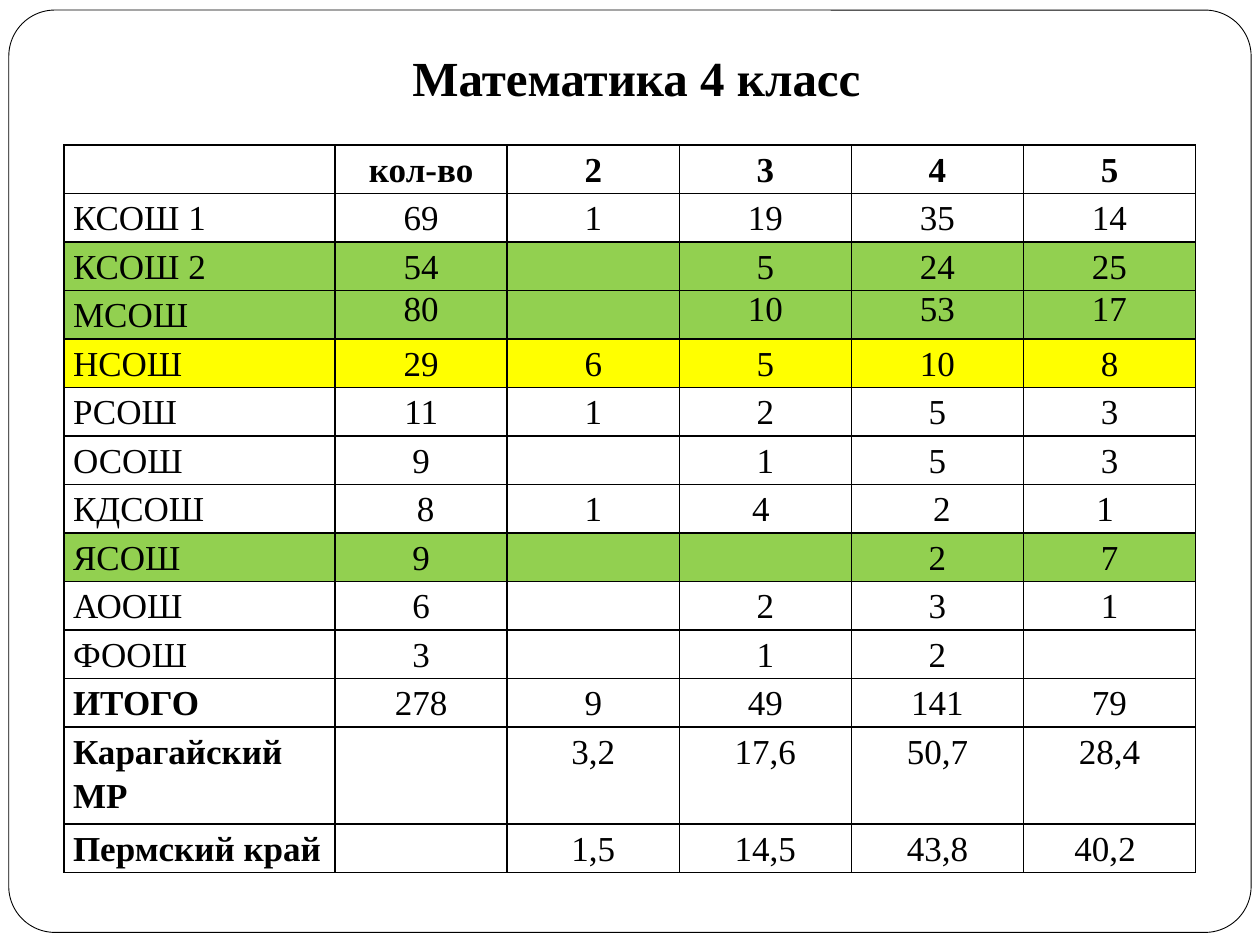
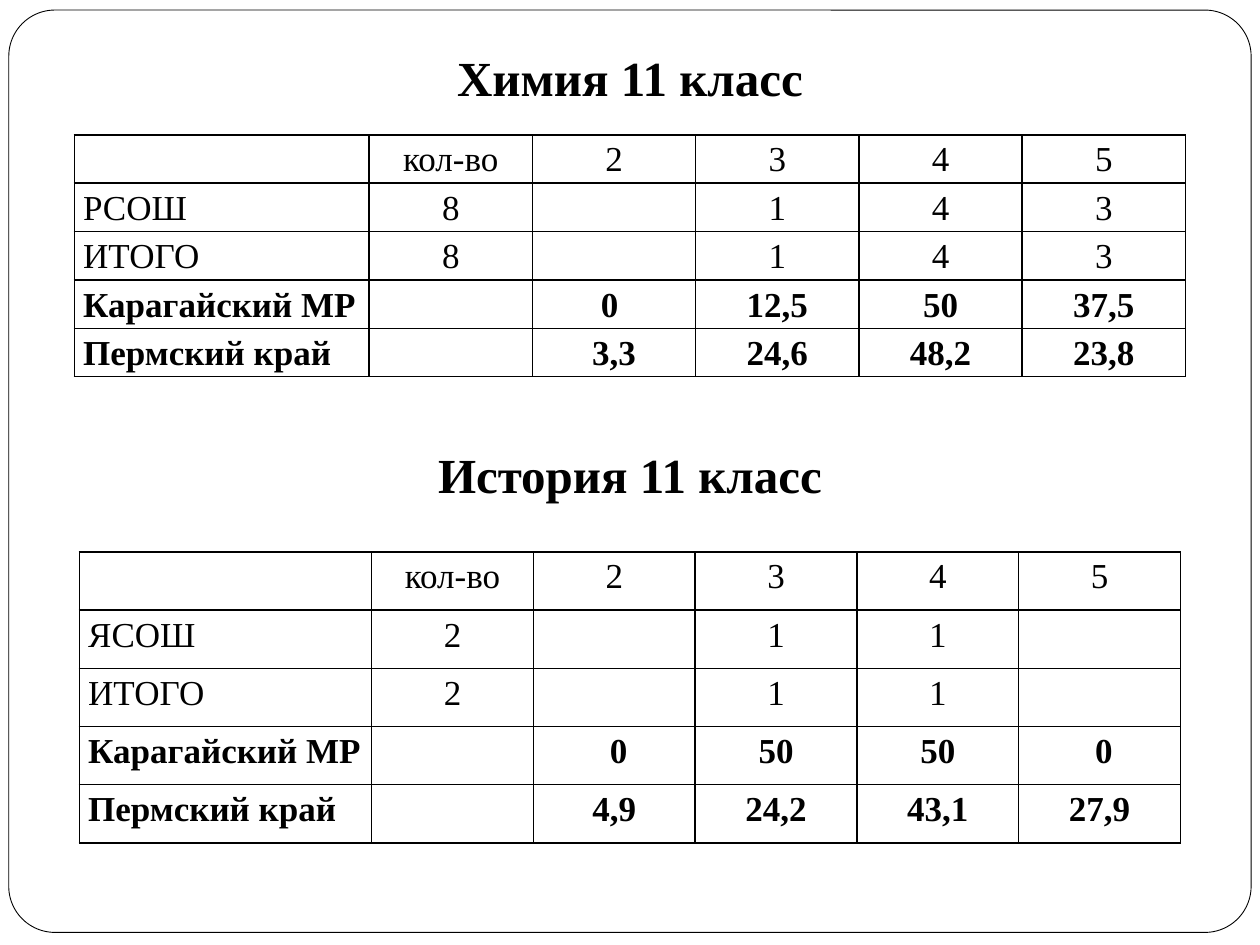
import dataclasses

import lxml.etree
import pptx
import pptx.dml.color
import pptx.enum.shapes
import pptx.enum.text
import pptx.oxml.ns
import pptx.util

Inches = pptx.util.Inches
Pt = pptx.util.Pt
CENTER = pptx.enum.text.PP_ALIGN.CENTER
LEFT = pptx.enum.text.PP_ALIGN.LEFT


@dataclasses.dataclass(frozen=True)
class Theme:
    font: str = "Times New Roman"
    title_size: float = 28
    cell_size: float = 20
    ink: str = "000000"
    paper: str = "FFFFFF"
    strong: str = "92D050"
    weak: str = "FFFF00"
    frame_line: float = 0.5
    grid_line: float = 1
    line_spacing: float = 1.15
    cell_margin: float = 0.07


THEME = Theme()


@dataclasses.dataclass(frozen=True)
class Grades:
    """Rows of marks, with the row numbers that are formatted differently."""
    rows: list
    bold_rows: tuple = ()
    bold_labels: tuple = ()
    tight_rows: tuple = ()
    tall_rows: tuple = ()
    fills: dict = dataclasses.field(default_factory=dict)


HEADER = "|кол-во|2|3|4|5"

MATHS = Grades(
    rows=[
        HEADER,
        "КСОШ 1|69|1|19|35|14",
        "КСОШ 2|54||5|24|25",
        "МСОШ|80||10|53|17",
        "НСОШ|29|6|5|10|8",
        "РСОШ|11|1|2|5|3",
        "ОСОШ|9||1|5|3",
        "КДСОШ| 8|1|4 | 2|1 ",
        "ЯСОШ|9|||2|7",
        "АООШ|6||2|3|1",
        "ФООШ|3||1|2|",
        "ИТОГО|278|9|49|141|79",
        "Карагайский МР||3,2|17,6|50,7|28,4",
        "Пермский край||1,5|14,5|43,8|40,2 ",
    ],
    bold_rows=(0,),
    bold_labels=(11, 12, 13),
    tight_rows=(3,),
    tall_rows=(12,),
    fills={2: THEME.strong, 3: THEME.strong, 4: THEME.weak, 8: THEME.strong},
)

CHEMISTRY = Grades(
    rows=[
        HEADER,
        "РСОШ|8||1|4|3",
        "ИТОГО|8||1|4|3",
        "Карагайский МР||0 |12,5|50|37,5",
        "Пермский край||3,3|24,6|48,2|23,8",
    ],
    bold_rows=(3, 4),
)

HISTORY = Grades(
    rows=[
        HEADER,
        "ЯСОШ|2||1|1|",
        "ИТОГО|2||1|1|",
        "Карагайский МР|| 0|50|50| 0",
        "Пермский край||4,9|24,2|43,1|27,9",
    ],
    bold_rows=(3, 4),
)


def rgb(value):
    return pptx.dml.color.RGBColor.from_string(value)


def style_paragraph(paragraph, size, bold, align):
    paragraph.alignment = align
    for run in paragraph.runs:
        run.font.name = THEME.font
        run.font.size = Pt(size)
        run.font.bold = bold
        run.font.color.rgb = rgb(THEME.ink)


def add_frame(slide, box):
    """Rounded outline around the whole slide."""
    frame = slide.shapes.add_shape(
        pptx.enum.shapes.MSO_SHAPE.ROUNDED_RECTANGLE, *map(Inches, box))
    frame.adjustments[0] = 0.05
    frame.shadow.inherit = False
    frame.fill.solid()
    frame.fill.fore_color.rgb = rgb(THEME.paper)
    frame.line.color.rgb = rgb(THEME.ink)
    frame.line.width = Pt(THEME.frame_line)


def add_title(slide, box, text):
    title = slide.shapes.add_textbox(*map(Inches, box)).text_frame
    title.word_wrap = True
    title.text = text
    style_paragraph(title.paragraphs[0], THEME.title_size, True, CENTER)


def add_borders(cell):
    """Draw all four sides; border elements precede the fill in tcPr."""
    properties = cell._tc.get_or_add_tcPr()
    for position, side in enumerate(("a:lnL", "a:lnR", "a:lnT", "a:lnB")):
        border = lxml.etree.Element(
            pptx.oxml.ns.qn(side), w=str(Pt(THEME.grid_line)))
        fill = lxml.etree.SubElement(border, pptx.oxml.ns.qn("a:solidFill"))
        lxml.etree.SubElement(
            fill, pptx.oxml.ns.qn("a:srgbClr"), val=THEME.ink)
        properties.insert(position, border)


def fill_cell(cell, text, bold, align, spacing, fill):
    cell.margin_left = cell.margin_right = Inches(THEME.cell_margin)
    cell.margin_top = cell.margin_bottom = 0
    if fill:
        cell.fill.solid()
        cell.fill.fore_color.rgb = rgb(fill)
    else:
        cell.fill.background()
    add_borders(cell)
    if text:
        cell.text_frame.text = text
        paragraph = cell.text_frame.paragraphs[0]
        paragraph.line_spacing = spacing
        style_paragraph(paragraph, THEME.cell_size, bold, align)


def add_grades(slide, box, grades, label_width):
    """Label column of a given width, the mark columns share the rest."""
    left, top, width, height = box
    records = [row.split("|") for row in grades.rows]
    mark_count = len(records[0]) - 1
    table = slide.shapes.add_table(
        len(records), mark_count + 1, *map(Inches, box)).table
    table.first_row = table.horz_banding = False

    table.columns[0].width = Inches(label_width)
    for column in range(1, mark_count + 1):
        table.columns[column].width = Inches((width - label_width) / mark_count)

    line_height = height / (len(records) + len(grades.tall_rows))
    for r, record in enumerate(records):
        lines = 2 if r in grades.tall_rows else 1
        table.rows[r].height = Inches(line_height * lines)
        for c, text in enumerate(record):
            is_label = c == 0
            bold = r in grades.bold_rows or (is_label and r in grades.bold_labels)
            tight = r in grades.tight_rows and not is_label
            fill_cell(table.cell(r, c), text, bold,
                      LEFT if is_label else CENTER,
                      1.0 if tight else THEME.line_spacing,
                      grades.fills.get(r))


def add_framed_slide(deck):
    slide = deck.slides.add_slide(deck.slide_layouts[6])
    add_frame(slide, (0.07, 0.08, 9.86, 7.32))
    return slide


def build_maths(deck):
    slide = add_framed_slide(deck)
    add_title(slide, (1.19, 0.33, 7.72, 0.57), "Математика 4 класс")
    add_grades(slide, (0.51, 1.15, 8.98, 5.78), MATHS, 2.15)


def build_chemistry_and_history(deck):
    slide = add_framed_slide(deck)
    # Upper half
    add_title(slide, (0, 0.33, 10, 0.57), "Химия 11 класс")
    add_grades(slide, (0.59, 1.07, 8.82, 1.92), CHEMISTRY, 2.34)
    # Lower half
    add_title(slide, (0, 3.48, 10, 0.57), "История 11 класс")
    add_grades(slide, (0.63, 4.38, 8.74, 2.31), HISTORY, 2.32)


def main():
    deck = pptx.Presentation()
    deck.slide_width = Inches(10)
    deck.slide_height = Inches(7.5)
    build_maths(deck)
    build_chemistry_and_history(deck)
    deck.save("out.pptx")


if __name__ == "__main__":
    main()
